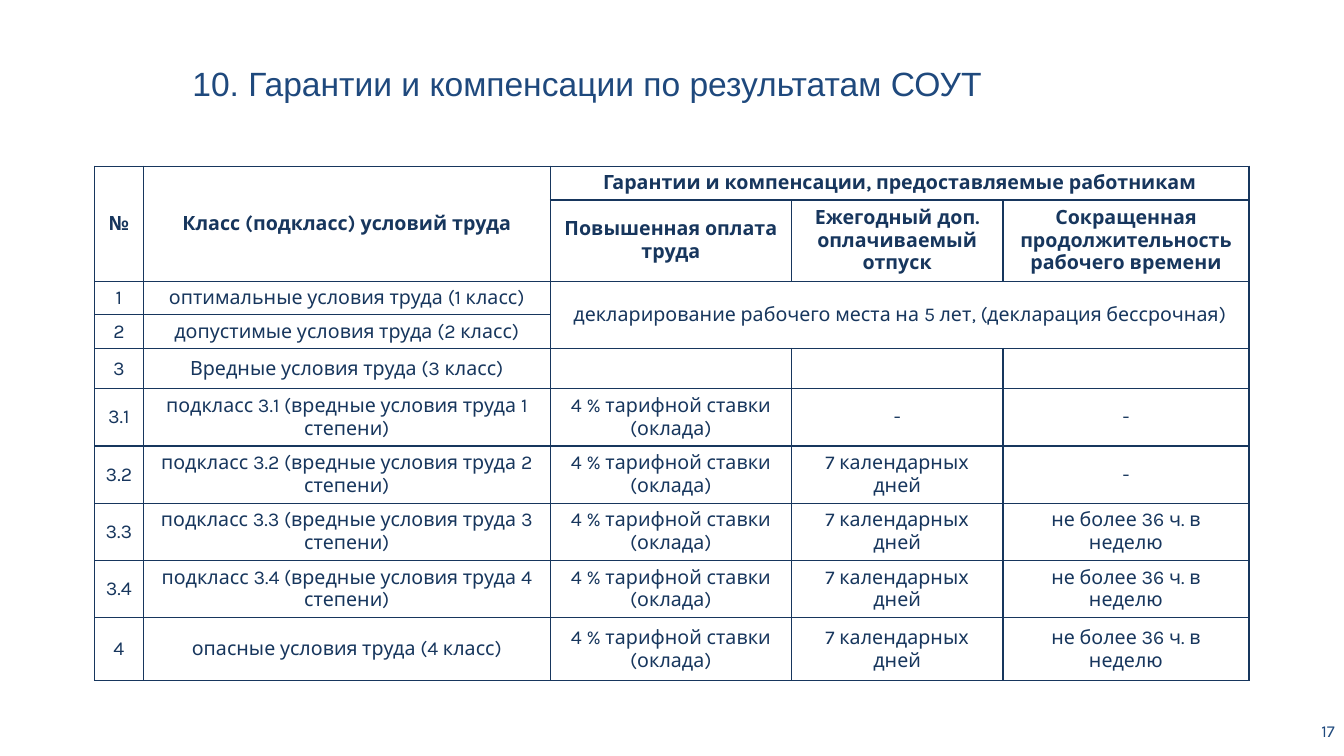
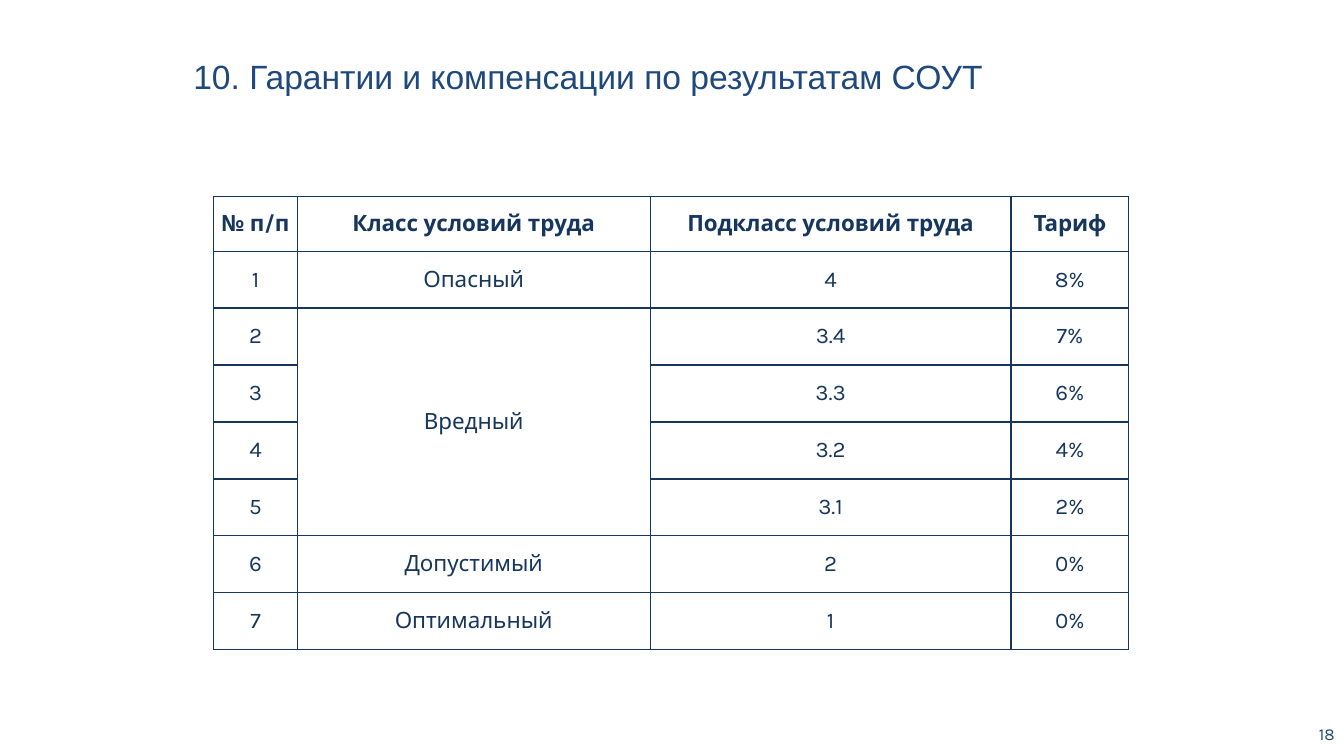
from lxml import etree
from pptx import Presentation
from pptx.dml.color import RGBColor
from pptx.enum import text as tx
from pptx.oxml.ns import qn
from pptx.util import Pt

NAVY = RGBColor(0x17, 0x36, 0x5D)
BLUE = RGBColor(0x1F, 0x49, 0x7D)
HEAD = "Arial"
BODY = "Karla"
TITLE = "10. Гарантии и компенсации по результатам СОУТ"


def write(frame, words, size=14, font=BODY, color=NAVY, bold=False,
          align=tx.PP_ALIGN.CENTER, space=None):
    par = frame.paragraphs[0]
    par.alignment = align
    par.line_spacing = space
    run = par.add_run()
    run.text = words
    run.font.size = Pt(size)
    run.font.name = font
    run.font.bold = bold
    run.font.color.rgb = color


def rule(cell):
    """Draw a thin line on all four sides of a cell."""
    props = cell._tc.get_or_add_tcPr()
    for spot, side in enumerate(("a:lnL", "a:lnR", "a:lnT", "a:lnB")):
        line = etree.Element(qn(side), w=str(Pt(1)))
        fill = etree.SubElement(line, qn("a:solidFill"))
        etree.SubElement(fill, qn("a:srgbClr"), val=str(NAVY))
        props.insert(spot, line)


class Deck:
    def __init__(self):
        self.prs = Presentation()
        self.prs.slide_width = Pt(960)
        self.prs.slide_height = Pt(540)
        self.slide = None

    def page(self, number, left, top, foot):
        """Start a slide with its title and number."""
        self.slide = self.prs.slides.add_slide(self.prs.slide_layouts[6])
        self.label(TITLE, left, top, 794, 49, size=24, font=HEAD,
                   color=BLUE, align=tx.PP_ALIGN.LEFT, space=0.89)
        self.label(str(number), 834.5, foot, 126, 31.7, size=12, color=BLUE,
                   align=tx.PP_ALIGN.RIGHT, anchor=tx.MSO_ANCHOR.MIDDLE)

    def label(self, words, left, top, width, height,
              anchor=tx.MSO_ANCHOR.TOP, **style):
        box = self.slide.shapes.add_textbox(
            Pt(left), Pt(top), Pt(width), Pt(height))
        frame = box.text_frame
        frame.word_wrap = True
        frame.vertical_anchor = anchor
        write(frame, words, **style)

    def table(self, left, top, cols, rows, data, spans, heads=1, size=14,
              inset=(7.2, 3.6)):
        """Fill a grid; spans hold first row, first column, last row, last column."""
        grid = self.slide.shapes.add_table(
            len(rows), len(cols), Pt(left), Pt(top),
            Pt(sum(cols)), Pt(sum(rows))).table
        grid.first_row = grid.horz_banding = False
        for col, width in zip(grid.columns, cols):
            col.width = Pt(width)
        for row, height in zip(grid.rows, rows):
            row.height = Pt(height)
        for r1, c1, r2, c2 in spans:
            grid.cell(r1, c1).merge(grid.cell(r2, c2))
        for r, line in enumerate(data):
            for c, words in enumerate(line):
                cell = grid.cell(r, c)
                cell.fill.background()
                cell.vertical_anchor = tx.MSO_ANCHOR.MIDDLE
                cell.margin_left = cell.margin_right = Pt(inset[0])
                cell.margin_top = cell.margin_bottom = Pt(inset[1])
                rule(cell)
                write(cell.text_frame, words, size=size, bold=r < heads)


def main():
    pay = "4 % тарифной ставки (оклада)"
    leave = "7 календарных дней"
    week = "не более 36 ч. в неделю"
    perks = [(pay, "-", "-"), (pay, leave, "-"),
             (pay, leave, week), (pay, leave, week)]
    data = [
        ("№", "Класс (подкласс) условий труда",
         "Гарантии и компенсации, предоставляемые работникам", "", ""),
        ("", "", "Повышенная оплата труда", "Ежегодный доп. оплачиваемый отпуск",
         "Сокращенная продолжительность рабочего времени"),
        ("1", "оптимальные условия труда (1 класс)",
         "декларирование рабочего места на 5 лет, (декларация бессрочная)",
         "", ""),
        ("2", "допустимые условия труда (2 класс)", "", "", ""),
        ("3", "Вредные условия труда (3 класс)", "", "", ""),
        *((f"3.{n}", f"подкласс 3.{n} (вредные условия труда {n} степени)", *perk)
          for n, perk in enumerate(perks, 1)),
        ("4", "опасные условия труда (4 класс)", pay, leave, week),
    ]
    deck = Deck()
    deck.page(17, 130.3, 44.6, 506.2)
    deck.table(67.7, 118.8, [34.6, 290.9, 172.1, 151.2, 175.7],
               [23.5, 58] + [23.5] * 3 + [40] * 4 + [45], data,
               [(0, 0, 1, 0), (0, 1, 1, 1), (0, 2, 0, 4), (2, 2, 3, 4)],
               heads=2)

    kinds = ["Опасный", "Вредный", "", "", "", "Допустимый", "Оптимальный"]
    subs = ["4", "3.4", "3.3", "3.2", "3.1", "2", "1"]
    rates = ["8%", "7%", "6%", "4%", "2%", "0%", "0%"]
    order = [str(n) for n in range(1, 8)]
    deck.page(18, 131, 39.6, 508.3)
    deck.table(152.6, 140.4, [59.8, 252, 257.8, 84.2], [39] + [40.7] * 7,
               [("№ п/п", "Класс условий труда", "Подкласс условий труда", "Тариф"),
                *zip(order, kinds, subs, rates)],
               [(2, 1, 5, 1)], size=16, inset=(5, 0))
    deck.prs.save("out.pptx")


if __name__ == "__main__":
    main()
